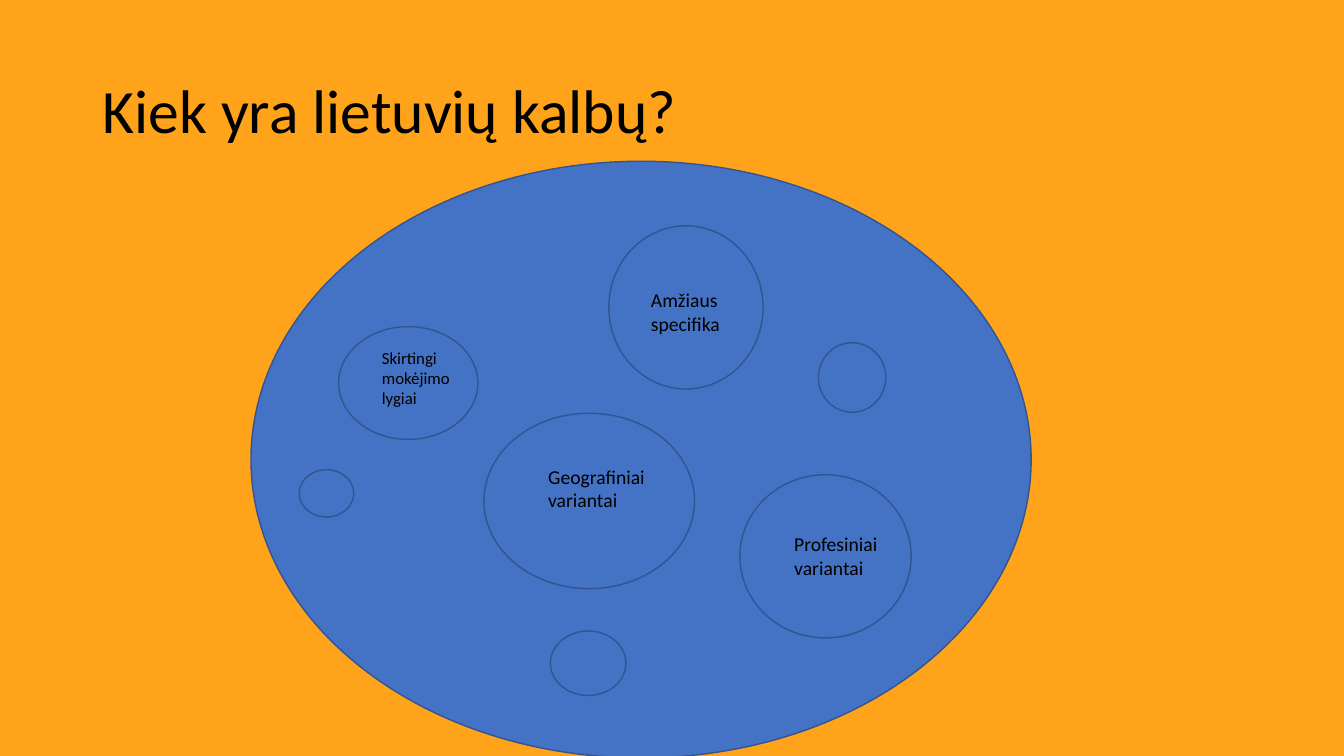
from pptx import Presentation
from pptx.dml.color import RGBColor
from pptx.enum.shapes import MSO_SHAPE as Kind
from pptx.enum.text import MSO_ANCHOR as Anchor, MSO_AUTO_SIZE as Fit
from pptx.util import Pt

ORANGE, BLUE, NAVY, BLACK = "FFA31A", "4472C4", "325491", "000000"

# Ovals, back to front: left, top, width, height
OVALS = [
    (179.3, 115.2, 557.3, 426.2),
    (241.9, 233.3, 99.4, 80.6),
    (434.9, 161.3, 110.2, 116.6),
    (345.6, 295.2, 150.5, 125.3),
    (528.5, 339.1, 122.4, 116.6),
    (393.1, 450.7, 54, 46.1),
    (584.6, 244.8, 48.2, 49.7),
    (213.8, 335.5, 38.9, 33.8),
]

# Labels: text, size, box
LABELS = [
    ("Skirtingi mokėjimo lygiai", 12, (265.7, 244.8, 65.5, 51.1)),
    ("Amžiaus specifika", 14, (457.9, 202.3, 77, 41)),
    ("Geografiniai variantai", 14, (384.5, 328.3, 93.6, 41)),
    ("Profesiniai variantai", 14, (560.2, 376.6, 85, 41)),
]


def tint(code):
    return RGBColor.from_string(code)


def style(item, form):
    for name, value in form.items():
        setattr(item, name, value)


def paint(fill, code):
    fill.solid()
    fill.fore_color.rgb = tint(code)


def oval(slide, box):
    shape = slide.shapes.add_shape(Kind.OVAL, *map(Pt, box))
    shape.shadow.inherit = False
    paint(shape.fill, BLUE)
    paint(shape.line.fill, NAVY)
    shape.line.width = Pt(1)


def label(slide, text, size, box, frame_form, para_form):
    frame = slide.shapes.add_textbox(*map(Pt, box)).text_frame
    style(frame, {"word_wrap": True, **frame_form})
    para = frame.paragraphs[0]
    style(para, para_form)
    run = para.add_run()
    run.text = text
    style(run.font, {"name": "Calibri", "size": Pt(size)})
    run.font.color.rgb = tint(BLACK)


def main():
    deck = Presentation()
    style(deck, {"slide_width": Pt(960), "slide_height": Pt(540)})
    slide = deck.slides.add_slide(deck.slide_layouts[6])
    paint(slide.background.fill, ORANGE)

    # Title
    label(slide, "Kiek yra lietuvių kalbų?", 44, (66.2, 28.8, 828, 104.4),
          {"vertical_anchor": Anchor.MIDDLE}, {"line_spacing": 0.9})

    # Language circles
    for box in OVALS:
        oval(slide, box)

    # Circle labels
    for text, size, box in LABELS:
        label(slide, text, size, box,
              {"auto_size": Fit.SHAPE_TO_FIT_TEXT}, {})

    deck.save("out.pptx")


if __name__ == "__main__":
    main()
